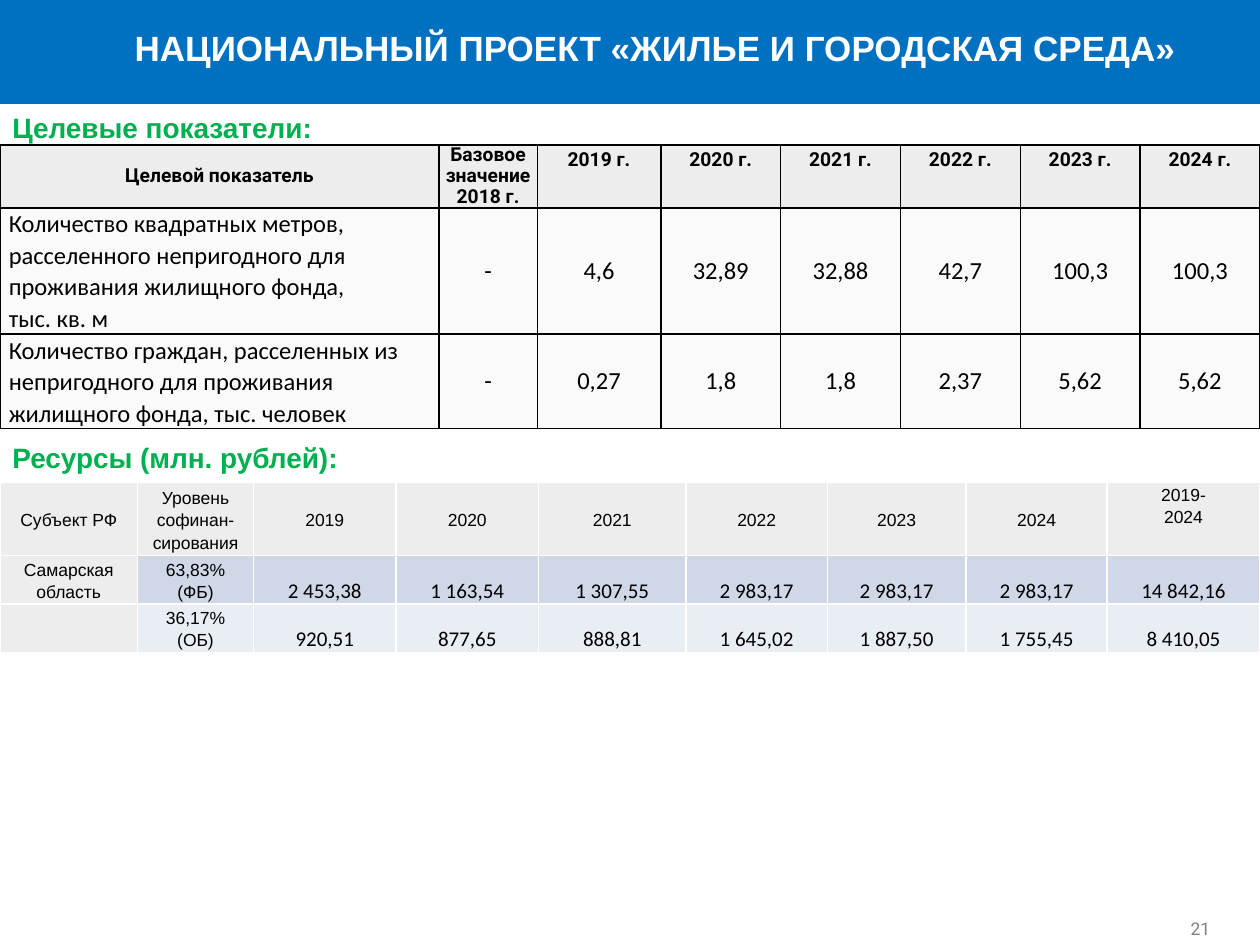
from pptx import Presentation
from pptx.dml.color import RGBColor
from pptx.enum.shapes import MSO_SHAPE
from pptx.enum.text import MSO_ANCHOR, PP_ALIGN
from pptx.oxml import parse_xml
from pptx.oxml.ns import nsdecls
from pptx.util import Inches, Pt
from lxml.etree import SubElement

WIDE, HIGH = Inches(10), Inches(7.5)
BLUE = RGBColor(0x00, 0x70, 0xC1)
GREEN = RGBColor(0x00, 0xB0, 0x50)
WHITE = RGBColor(0xFF, 0xFF, 0xFF)
BLACK = RGBColor(0x00, 0x00, 0x00)
GREY = RGBColor(0x80, 0x80, 0x80)
HEAD = RGBColor(0xED, 0xED, 0xED)
SILVER = RGBColor(0xDC, 0xDC, 0xDC)
PALE = RGBColor(0xF2, 0xF2, 0xF2)
BAND = RGBColor(0xD0, 0xD8, 0xE8)
LIGHT = RGBColor(0xE9, 0xED, 0xF4)
MID, TOP, LOW = MSO_ANCHOR.MIDDLE, MSO_ANCHOR.TOP, MSO_ANCHOR.BOTTOM
LEFT, MIDDLE = PP_ALIGN.LEFT, PP_ALIGN.CENTER
UNIT = chr(160).join(["тыс.", "кв.", "м"])

GOALS = [
    ["Целевой показатель", "Базовое значение 2018 г."]
    + [f"{year} г." for year in range(2019, 2025)],
    ["Количество квадратных метров, расселенного непригодного для "
     f"проживания жилищного фонда, {UNIT}",
     "-", "4,6", "32,89", "32,88", "42,7", "100,3", "100,3"],
    ["Количество граждан, расселенных из непригодного для проживания "
     "жилищного фонда, тыс. человек",
     "-", "0,27", "1,8", "1,8", "2,37", "5,62", "5,62"],
]
FUNDS = [
    ["Субъект РФ", "Уровень софинан-сирования"]
    + [str(year) for year in range(2019, 2025)] + ["2019-\n2024"],
    ["Самарская область", "63,83% (ФБ)", "2 453,38", "1 163,54", "1 307,55",
     "2 983,17", "2 983,17", "2 983,17", "14 842,16"],
    ["", "36,17% (ОБ)", "920,51", "877,65", "888,81",
     "1 645,02", "1 887,50", "1 755,45", "8 410,05"],
]


def style(frame, size, face, color, bold=False, align=LEFT, space=None):
    """Format every paragraph of a text frame."""
    for para in frame.paragraphs:
        para.alignment = align
        if space:
            para.line_spacing = space
        font = para.font
        font.size, font.name, font.bold = Pt(size), face, bold
        font.color.rgb = color


def place(x, y, w, h):
    """Turn shares of the slide into lengths."""
    return int(x * WIDE), int(y * HIGH), int(w * WIDE), int(h * HIGH)


def banner(slide):
    """Draw the blue band across the top."""
    band = slide.shapes.add_shape(MSO_SHAPE.RECTANGLE, *place(0, 0, 1, 0.11))
    band.shadow.inherit = False
    band.fill.solid()
    band.fill.fore_color.rgb = BLUE
    band.line.fill.background()


def label(slide, text, area, inset=0.1, anchor=TOP, wrap=False, **look):
    """Add one line of text."""
    frame = slide.shapes.add_textbox(*place(*area)).text_frame
    frame.word_wrap = wrap
    frame.vertical_anchor = anchor
    frame.margin_left = frame.margin_right = Inches(inset)
    frame.margin_top = frame.margin_bottom = Inches(0.05)
    frame.text = text
    style(frame, **look)


def border(cell, color):
    """Give a cell one-point lines on all four sides."""
    props = cell._tc.get_or_add_tcPr()
    for side in "LRTB":
        props.append(parse_xml(
            f'<a:ln{side} {nsdecls("a")} w="{Pt(1)}"><a:solidFill>'
            f'<a:srgbClr val="{color}"/></a:solidFill></a:ln{side}>'))


def paint(cell, color, alpha=100):
    """Fill a cell, with opacity in percent."""
    cell.fill.solid()
    cell.fill.fore_color.rgb = color
    if alpha < 100:
        tint = cell.fill._xPr.solidFill[0]
        SubElement(tint, tint.tag.replace("srgbClr", "alpha"),
                   val=str(alpha * 1000))


def grid(slide, data, top, cols, rows, edge, rule):
    """Add a table whose cell looks come from a rule of row and column."""
    area = place(0, top / 7.5, 1, sum(rows) / 7.5)
    frame = slide.shapes.add_table(len(rows), len(cols), *area)
    table = frame.table
    table.first_row = table.horz_banding = False
    for col, wide in zip(table.columns, cols):
        col.width = int(WIDE * wide / sum(cols))
    for row, high in zip(table.rows, rows):
        row.height = Inches(high)
    for r, line in enumerate(data):
        for c, text in enumerate(line):
            cell = table.cell(r, c)
            fill, anchor, inset, look = rule(r, c)
            cell.text = text
            cell.vertical_anchor = anchor
            cell.margin_left = cell.margin_right = Inches(inset)
            cell.margin_top = cell.margin_bottom = 0
            border(cell, edge)
            paint(cell, *fill)
            style(cell.text_frame, color=BLACK, **look)


def goal(r, c):
    """Return the look of a cell in the table of targets."""
    if r == 0:
        look = dict(size=11, face="Roboto", bold=True, align=MIDDLE,
                    space=Pt(12) if c < 2 else 1.15)
        return (HEAD,), (MID, LOW)[c] if c < 2 else TOP, 0.01, look
    look = dict(size=14, face="Calibri", align=MIDDLE if c else LEFT,
                space=None if c else Pt(18))
    return (PALE, 36), MID, 0 if c == 1 else 0.07, look


def fund(r, c):
    """Return the look of a cell in the table of resources."""
    fill = (SILVER, 50) if r == 0 or c == 0 else ((BAND, LIGHT)[r - 1],)
    if r and c > 1:
        return fill, LOW, 0.01, dict(size=12, face="Calibri", align=MIDDLE)
    look = dict(size=10, face="Arial", align=MIDDLE, space=1.15)
    return fill, TOP if c == 8 else MID, 0.07, look


def main():
    """Build the slide and save it."""
    deck = Presentation()
    deck.slide_width, deck.slide_height = WIDE, HIGH
    slide = deck.slides.add_slide(deck.slide_layouts[6])
    banner(slide)
    label(slide, "21", (0.94, 0.95, 0.06, 0.05), 0.05, LOW,
          size=10, face="Roboto", color=GREY)
    title = dict(size=16, face="Arial", color=GREEN, bold=True)
    label(slide, "Целевые показатели:", (0, 0.11, 0.36, 0.05),
          wrap=True, **title)
    grid(slide, FUNDS, 3.83,
         [1.09, 0.92, 1.13, 1.13, 1.17, 1.12, 1.1, 1.12, 1.21],
         [0.58, 0.38, 0.38], WHITE, fund)
    label(slide, "Ресурсы (млн. рублей):", (0, 0.46, 0.29, 0.05), **title)
    grid(slide, GOALS, 1.15, [3.48, 0.78, 0.98] + [0.95] * 5,
         [0.5, 1, 0.75], BLACK, goal)
    label(slide, "НАЦИОНАЛЬНЫЙ ПРОЕКТ «ЖИЛЬЕ И ГОРОДСКАЯ СРЕДА»",
          (0.08, 0.02, 0.88, 0.06), 0.05, MID, size=20, face="Arial",
          color=WHITE, bold=True, align=MIDDLE)
    deck.save("out.pptx")


if __name__ == "__main__":
    main()
